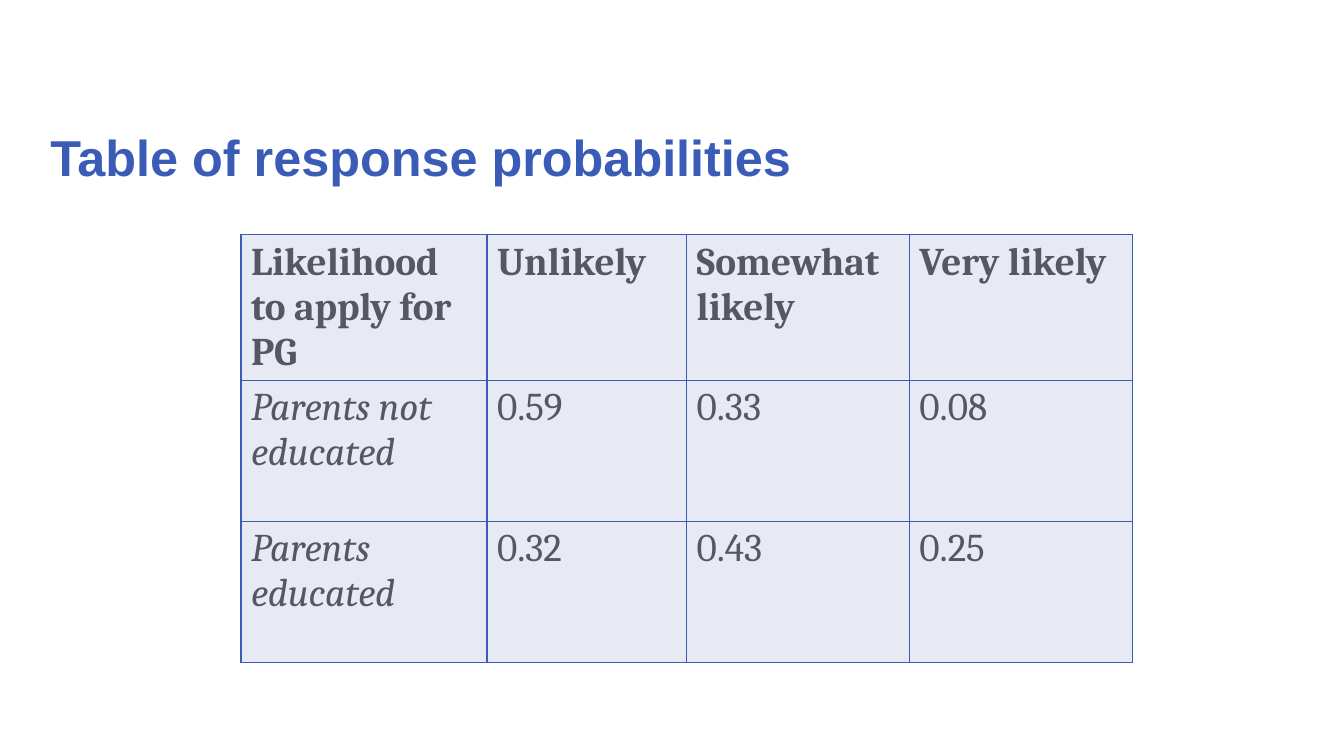
"""Build the slide with the table of response probabilities."""
from lxml.etree import SubElement
from pptx import Presentation
from pptx.dml.color import RGBColor
from pptx.enum.text import MSO_ANCHOR, PP_ALIGN
from pptx.oxml.ns import qn
from pptx.util import Inches, Pt

BLUE, GREY, PALE = "3A5CB7", "545860", "E8EAF3"


def style_font(font, color, **values):
    font.color.rgb = RGBColor.from_string(color)
    for attribute, value in values.items():
        setattr(font, attribute, value)


def add_borders(cell, color, width):
    properties = cell._tc.get_or_add_tcPr()
    for side in ("lnL", "lnR", "lnT", "lnB"):
        line = SubElement(properties, qn(f"a:{side}"), w=str(width))
        fill = SubElement(line, qn("a:solidFill"))
        SubElement(fill, qn("a:srgbClr"), val=color)


presentation = Presentation()
presentation.slide_width = Inches(13.33)
presentation.slide_height = Inches(7.5)
slide = presentation.slides.add_slide(presentation.slide_layouts[5])

heading = slide.shapes.title
heading_place = {"left": 0.4, "top": 1.06, "width": 12.54, "height": 1.06}
for attribute, length in heading_place.items():
    setattr(heading, attribute, Inches(length))
heading.text_frame.text = "Table of response probabilities"
heading.text_frame.vertical_anchor = MSO_ANCHOR.MIDDLE
heading_line = heading.text_frame.paragraphs[0]
heading_line.alignment = PP_ALIGN.LEFT
heading_line.line_spacing = 0.9
style_font(heading_line.runs[0].font, BLUE, name="Arial", size=Pt(36), bold=True)

responses = [
    ["Likelihood to apply for PG", "Unlikely", "Somewhat likely", "Very likely"],
    ["Parents not educated", "0.59", "0.33", "0.08"],
    ["Parents educated", "0.32", "0.43", "0.25"],
]
column_widths = [2.44, 1.98, 2.21, 2.21]
row_heights = [1.44, 1.4, 1.4]

probabilities = slide.shapes.add_table(
    len(row_heights), len(column_widths), Inches(2.39), Inches(2.33),
    Inches(sum(column_widths)), Inches(sum(row_heights))).table
for column, width in zip(probabilities.columns, column_widths):
    column.width = Inches(width)
for row, height in zip(probabilities.rows, row_heights):
    row.height = Inches(height)

for row_number, answers in enumerate(responses):
    for column_number, answer in enumerate(answers):
        cell = probabilities.cell(row_number, column_number)
        cell.text = answer
        add_borders(cell, BLUE, Pt(1))
        cell.fill.solid()
        cell.fill.fore_color.rgb = RGBColor.from_string(PALE)
        is_header = row_number == 0
        style_font(cell.text_frame.paragraphs[0].runs[0].font, GREY,
                   name="Cambria", size=Pt(28), bold=is_header,
                   italic=column_number == 0 and not is_header)

presentation.save("out.pptx")
